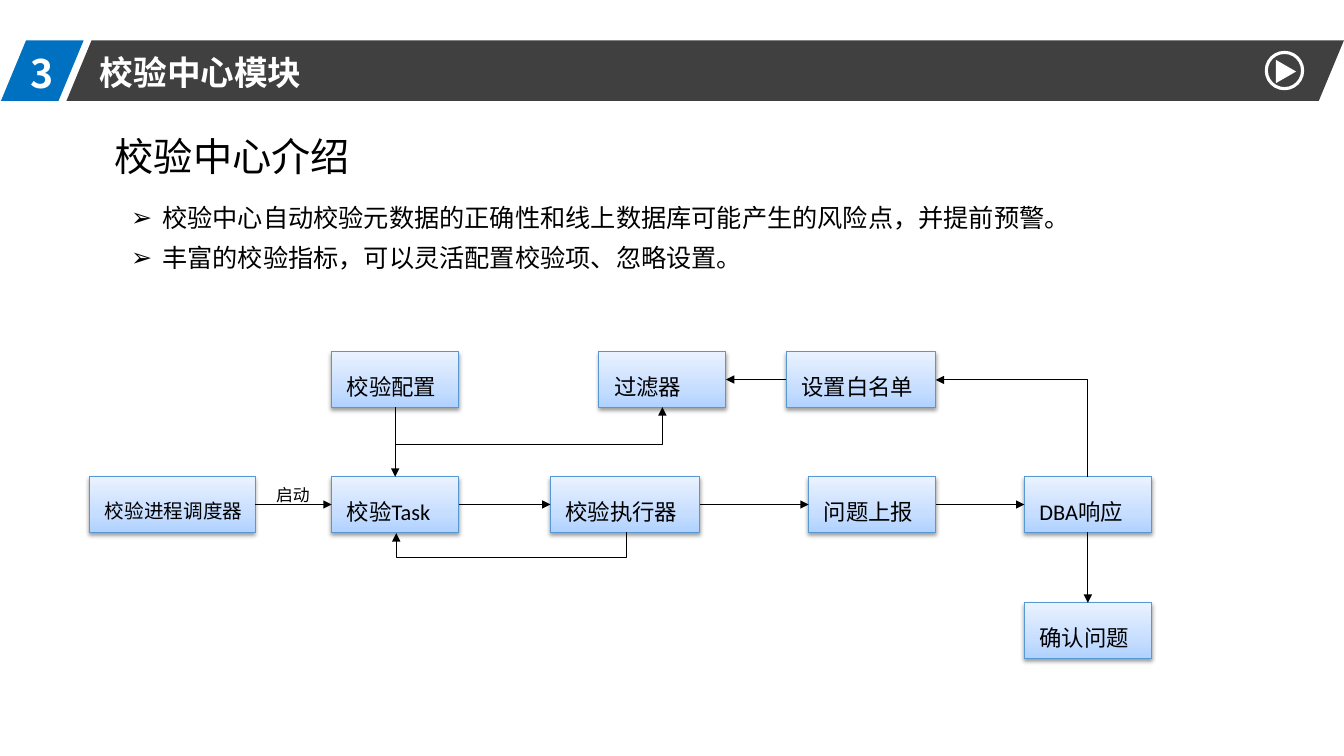
from pptx import Presentation
from pptx.dml.color import RGBColor
from pptx.enum.shapes import MSO_CONNECTOR, MSO_SHAPE
from pptx.enum.text import MSO_ANCHOR, MSO_AUTO_SIZE, PP_ALIGN
from pptx.oxml import parse_xml
from pptx.oxml.ns import nsdecls, qn
from pptx.util import Inches, Pt
from copy import deepcopy
from lxml.etree import SubElement

COLORS = {
    "band": "404040", "number": "0070C0", "white": "FFFFFF", "text": "000000",
    "box_line": "5698D3", "box_low": "B0D2FF", "box_mid": "C7DEFF", "box_high": "EAF2FF",
}
LATIN, CJK = "Calibri", "Noto Sans CJK SC"
TOP, LEFT, BOTTOM, RIGHT = range(4)
TOP_ROW, MAIN_ROW, LAST_ROW = 3.49, 4.73, 5.98
BOX_H = 0.55
NARROW, WIDE = 1.26, 1.48

BOXES = {  # text: left, top, width, text size
    "校验进程调度器": (0.89, MAIN_ROW, 1.64, 14),
    "校验Task": (3.29, MAIN_ROW, NARROW, 16),
    "校验执行器": (5.46, MAIN_ROW, WIDE, 16),
    "问题上报": (8.02, MAIN_ROW, NARROW, 16),
    "DBA响应": (10.16, MAIN_ROW, NARROW, 16),
    "校验配置": (3.29, TOP_ROW, NARROW, 16),
    "过滤器": (5.94, TOP_ROW, NARROW, 16),
    "设置白名单": (7.8, TOP_ROW, WIDE, 16),
    "确认问题": (10.16, LAST_ROW, NARROW, 16),
}
ARROWS = [
    ("校验进程调度器", RIGHT, "校验Task", LEFT),
    ("校验Task", RIGHT, "校验执行器", LEFT),
    ("校验执行器", RIGHT, "问题上报", LEFT),
    ("问题上报", RIGHT, "DBA响应", LEFT),
    ("校验配置", BOTTOM, "校验Task", TOP),
    ("DBA响应", BOTTOM, "确认问题", TOP),
    ("设置白名单", LEFT, "过滤器", RIGHT),
]


def rgb(name):
    return RGBColor.from_string(COLORS[name])


class Deck:
    def __init__(self):
        self.prs = Presentation()
        self.prs.slide_width, self.prs.slide_height = Inches(13.33), Inches(7.5)
        self.slide = self.prs.slides.add_slide(self.prs.slide_layouts[1])
        self.shapes = self.slide.shapes

    def place(self, sp, x, y, w, h):
        sp.left, sp.top, sp.width, sp.height = (Inches(v) for v in (x, y, w, h))

    def set_text(self, sp, lines, size, color="text", font=LATIN, bold=False, anchor=MSO_ANCHOR.TOP):
        tf = sp.text_frame
        tf.text = "\n".join(lines)
        tf.word_wrap, tf.auto_size, tf.vertical_anchor = True, MSO_AUTO_SIZE.NONE, anchor
        for p in tf.paragraphs:
            p.alignment = PP_ALIGN.LEFT
            for r in p.runs:
                r.font.size, r.font.name, r.font.bold = Pt(size), font, bold
                r.font.color.rgb = rgb(color)
                SubElement(r.font._element, qn("a:ea")).set("typeface", CJK)
        return tf

    def title(self, text, x, y, w, h):
        sp = self.shapes.title
        self.place(sp, x, y, w, h)
        self.set_text(sp, [text], 24, "white", CJK, True)
        self.shapes._spTree.append(sp._element)  # in front of the band

    def bullets(self, lines, x, y, w, h):
        sp = self.slide.placeholders[1]
        self.place(sp, x, y, w, h)
        for p in self.set_text(sp, lines, 18).paragraphs:
            p.space_before, p.space_after = Pt(0), Pt(7)
            pPr = p._p.get_or_add_pPr()
            pPr.set("marL", str(Inches(0.31)))
            pPr.set("indent", str(-Inches(0.31)))
            SubElement(pPr, qn("a:buChar")).set("char", "➢")

    def label(self, text, x, y, w, h, size, **style):
        sp = self.shapes.add_textbox(*(Inches(v) for v in (x, y, w, h)))
        self.set_text(sp, [text], size, **style)

    def shape(self, kind, x, y, w, h, fill=None, line=None, line_width=0.75):
        sp = self.shapes.add_shape(kind, *(Inches(v) for v in (x, y, w, h)))
        sp.shadow.inherit = False
        if fill:
            sp.fill.solid()
            sp.fill.fore_color.rgb = rgb(fill)
        else:
            sp.fill.background()
        if line:
            sp.line.color.rgb, sp.line.width = rgb(line), Pt(line_width)
        else:
            sp.line.fill.background()
        return sp

    def box(self, text, x, y, w, size):
        sp = self.shape(MSO_SHAPE.RECTANGLE, x, y, w, BOX_H, line="box_line")
        sp.fill.gradient()
        sp.fill.gradient_angle = 90
        stops = sp._element.spPr.find(".//" + qn("a:gsLst"))
        stops.insert(1, deepcopy(stops[0]))
        levels = [("box_low", 0), ("box_mid", 0.35), ("box_high", 1)]
        for stop, (color, position) in zip(sp.fill.gradient_stops, levels):
            stop.color.rgb, stop.position = rgb(color), position
        sp._element.spPr.find(qn("a:effectLst")).append(parse_xml(
            f'<a:outerShdw {nsdecls("a")} blurRad="{Pt(3.1)}" dist="{Pt(1.6)}" dir="5400000" '
            f'rotWithShape="0"><a:srgbClr val="{COLORS["text"]}"><a:alpha val="38000"/>'
            '</a:srgbClr></a:outerShdw>'))
        tf = self.set_text(sp, [text], size, anchor=MSO_ANCHOR.MIDDLE)
        tf.margin_left, tf.margin_right = Inches(0.15), Inches(0.05)
        tf.paragraphs[0].line_spacing = 1.5
        return sp

    def connector(self, kind, x1, y1, x2, y2):
        c = self.shapes.add_connector(kind, *(Inches(v) for v in (x1, y1, x2, y2)))
        c.line.color.rgb, c.line.width = rgb("text"), Pt(0.75)
        spPr = c._element.spPr
        SubElement(spPr.find(qn("a:ln")), qn("a:tailEnd")).set("type", "triangle")
        SubElement(spPr, qn("a:effectLst"))
        return c

    def arrow(self, start, start_side, end, end_side):
        c = self.connector(MSO_CONNECTOR.STRAIGHT, 0, 0, 1, 1)
        c.begin_connect(start, start_side)
        c.end_connect(end, end_side)

    def elbow(self, start, end, preset, turn=0, flip=False, bend=None):
        """Bent arrow; turn rotates its frame by degrees, bend places the middle leg."""
        (x1, y1), (x2, y2) = start, end
        cx, cy = (x1 + x2) / 2, (y1 + y2) / 2
        w, h = abs(x2 - x1) / 2, abs(y2 - y1) / 2
        if turn:
            w, h = h, w
        if flip:
            h = -h
        c = self.connector(MSO_CONNECTOR.ELBOW, cx - w, cy - h, cx + w, cy + h)
        spPr = c._element.spPr
        spPr.find(qn("a:xfrm")).set("rot", str(turn * 60000))
        geom = spPr.find(qn("a:prstGeom"))
        geom.set("prst", preset)
        if bend:
            guide = SubElement(geom.find(qn("a:avLst")), qn("a:gd"))
            guide.set("name", "adj1")
            guide.set("fmla", f"val {bend * 100000}")


def main():
    deck = Deck()
    for x, w, fill in [(0.66, 12.67, "band"), (0.01, 0.82, "number")]:
        sp = deck.shape(MSO_SHAPE.PARALLELOGRAM, x, 0.4, w, 0.6, fill)
        sp.adjustments[0] = 0.415
    deck.label("3", 0.2, 0.44, 0.69, 0.57, 28, color="white", font=CJK, bold=True)
    deck.title("校验中心模块", 0.89, 0.46, 2.87, 0.5)
    deck.shape(MSO_SHAPE.OVAL, 12.56, 0.52, 0.36, 0.36, line="white", line_width=2.25)
    play = deck.shape(MSO_SHAPE.ISOSCELES_TRIANGLE, 12.64, 0.61, 0.23, 0.2, "white")
    play.rotation = 90

    deck.label("校验中心介绍", 1.04, 1.26, 2.6, 0.57, 28)
    deck.bullets(["校验中心自动校验元数据的正确性和线上数据库可能产生的风险点，并提前预警。",
                  "丰富的校验指标，可以灵活配置校验项、忽略设置。"], 1.2, 1.96, 11.33, 0.86)

    boxes = {text: deck.box(text, *spot) for text, spot in BOXES.items()}
    for start, start_side, end, end_side in ARROWS:
        deck.arrow(boxes[start], start_side, boxes[end], end_side)
    deck.label("启动", 2.64, 4.76, 0.6, 0.3, 12)
    deck.elbow((6.21, 5.28), (3.93, 5.29), "bentConnector3", turn=90, bend=25)
    deck.elbow((10.79, 4.73), (9.28, 3.77), "bentConnector2", turn=270, flip=True)
    deck.elbow((3.93, 4.41), (6.57, 4.04), "bentConnector2", flip=True)
    deck.prs.save("out.pptx")


if __name__ == "__main__":
    main()
